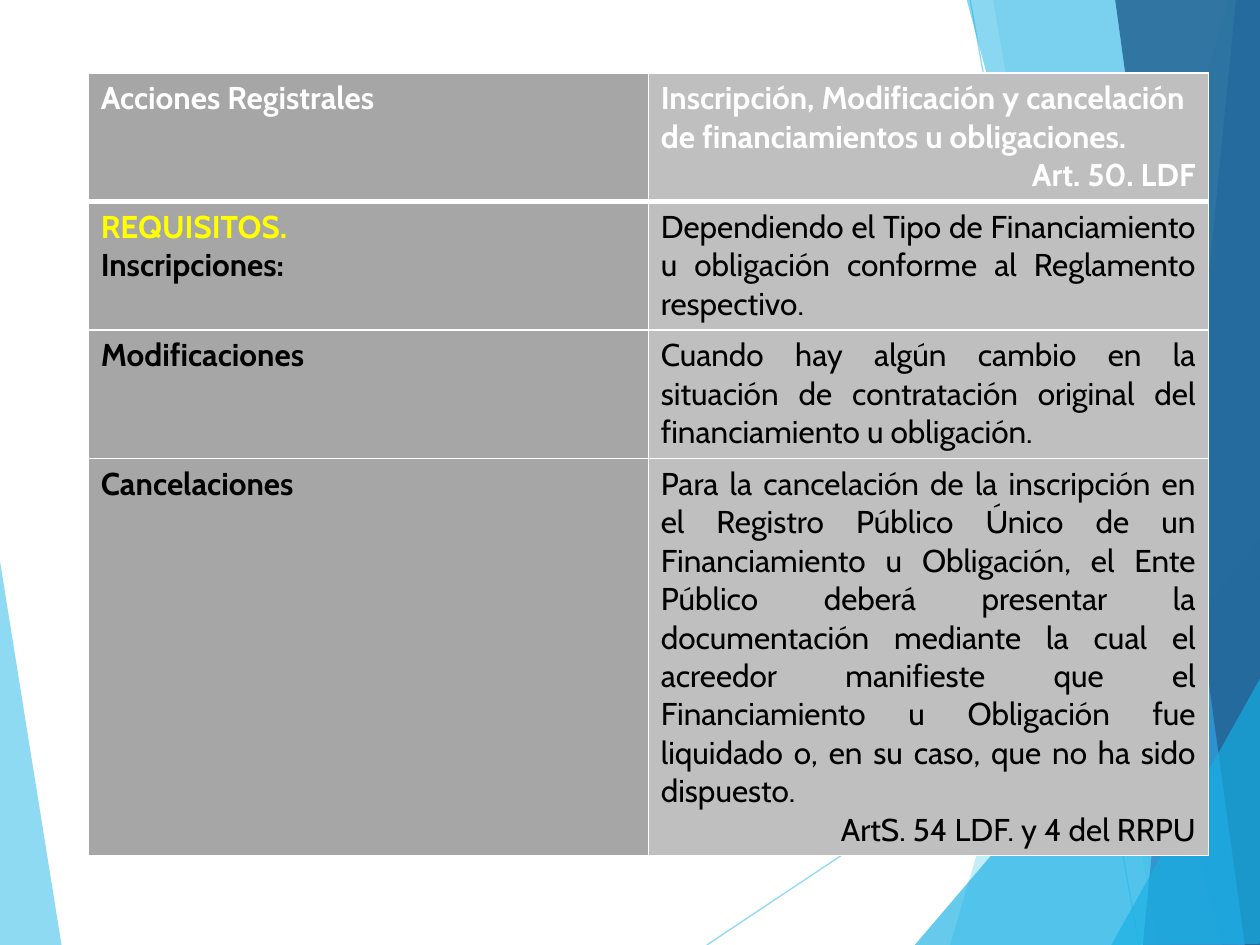
"""Build the slide on registry actions for financing and obligations."""
from dataclasses import dataclass

from lxml import etree
from pptx import Presentation
from pptx import util as u
from pptx.dml.color import RGBColor
from pptx.enum import shapes, text
from pptx.oxml.ns import qn

COLORS = {
    "sky": "5FCBEF", "cyan": "17B0E4", "blue": "2E83C3", "navy": "226292",
    "gray": "A6A6A6", "silver": "BFBFBF", "white": "FFFFFF",
    "yellow": "FFFF00", "black": "000000",
}
LEFT, RIGHT, JUSTIFY = text.PP_ALIGN.LEFT, text.PP_ALIGN.RIGHT, text.PP_ALIGN.JUSTIFY


@dataclass
class Facet:
    points: list[tuple[float, float]]
    color: str
    opacity: int


@dataclass
class Ray:
    start: tuple[float, float]
    end: tuple[float, float]


@dataclass
class Line:
    words: str
    color: str = "black"
    bold: bool = False
    align: text.PP_ALIGN = LEFT


@dataclass
class Row:
    height: float
    action: list[Line]
    detail: list[Line]


RAYS = [Ray((5.61, 7.5), (10.01, 4.57)), Ray((7.7, 0), (9.04, 7.5))]
LEFT_FACET = Facet([(-0.01, 4.39), (0.49, 7.51), (-0.01, 7.5)], "sky", 70)
RIGHT_FACETS = [
    Facet([(9.75, 0), (7.54, 7.5), (10.02, 7.51), (10.01, 0.01)], "sky", 36),
    Facet([(7.88, -0.01), (9.19, 7.5), (10.01, 7.5), (10.01, -0.01)], "sky", 20),
    Facet([(7.26, 7.5), (10, 4.29), (10.01, 7.5)], "cyan", 66),
    Facet([(7.67, -0.01), (9.7, 7.5), (10.01, 7.49), (10.01, -0.01)], "cyan", 50),
    Facet([(9.81, -0.01), (9.07, 7.5), (10.01, 7.5), (10, -0.01)], "blue", 70),
    Facet([(8.85, -0.01), (9.88, 7.5), (10.02, 7.5), (10, -0.01)], "navy", 82),
    Facet([(8.82, 7.5), (10.02, 5.35), (10.02, 7.49)], "cyan", 66),
]
ROWS = [
    Row(1.02, [Line("Acciones Registrales", "white", True)], [
        Line("Inscripción, Modificación y cancelación de financiamientos u "
             "obligaciones.", "white", True),
        Line("Art. 50. LDF", "white", True, RIGHT),
    ]),
    Row(1.02, [Line("REQUISITOS.", "yellow", True), Line("Inscripciones:", bold=True)], [
        Line("Dependiendo el Tipo de Financiamiento u obligación conforme al "
             "Reglamento respectivo.", align=JUSTIFY),
    ]),
    Row(1.02, [Line("Modificaciones", bold=True)], [
        Line("Cuando hay algún cambio en la situación de contratación original del "
             "financiamiento u obligación.", align=JUSTIFY),
    ]),
    Row(3.14, [Line("Cancelaciones", bold=True)], [
        Line("Para la cancelación de la inscripción en el Registro Público Único de un "
             "Financiamiento u Obligación, el Ente Público deberá presentar la "
             "documentación mediante la cual el acreedor manifieste que el "
             "Financiamiento u Obligación fue liquidado o, en su caso, que no ha sido "
             "dispuesto.", align=JUSTIFY),
        Line("ArtS. 54 LDF. y 4 del RRPU", align=RIGHT),
    ]),
]


def rgb(name: str) -> RGBColor:
    """Return the named colour."""
    return RGBColor.from_string(COLORS[name])


def set_opacity(shape, percent: int) -> None:
    """Make the only solid colour of a shape translucent."""
    color = next(shape._element.spPr.iter(qn("a:srgbClr")))
    etree.SubElement(color, qn("a:alpha"), val=str(percent * 1000))


def draw_facet(slide, facet: Facet) -> None:
    """Draw one translucent polygon."""
    corners = [(u.Inches(x), u.Inches(y)) for x, y in facet.points]
    builder = slide.shapes.build_freeform(*corners[0])
    builder.add_line_segments(corners[1:], close=True)
    polygon = builder.convert_to_shape()
    polygon.shadow.inherit = False
    polygon.fill.solid()
    polygon.fill.fore_color.rgb = rgb(facet.color)
    polygon.line.fill.background()
    set_opacity(polygon, facet.opacity)


def draw_ray(slide, ray: Ray) -> None:
    """Draw one thin translucent line."""
    ends = [u.Inches(value) for value in ray.start + ray.end]
    connector = slide.shapes.add_connector(shapes.MSO_CONNECTOR.STRAIGHT, *ends)
    connector.line.color.rgb = rgb("sky")
    connector.line.width = u.Pt(0.75)
    set_opacity(connector, 70)
    etree.SubElement(connector._element.spPr, qn("a:effectLst"))


def set_borders(cell, top: float, bottom: float) -> None:
    """Give a cell white borders, with its own top and bottom widths."""
    properties = cell._tc.get_or_add_tcPr()
    widths = {"lnL": 1, "lnR": 1, "lnT": top, "lnB": bottom}
    for position, (side, width) in enumerate(widths.items()):
        border = etree.Element(qn(f"a:{side}"), w=str(u.Pt(width)))
        fill = etree.SubElement(border, qn("a:solidFill"))
        etree.SubElement(fill, qn("a:srgbClr"), val=COLORS["white"])
        properties.insert(position, border)


def fill_cell(cell, lines: list[Line], background: str) -> None:
    """Write the lines of a cell and colour its background."""
    cell.fill.solid()
    cell.fill.fore_color.rgb = rgb(background)
    cell.text_frame.text = "\n".join(line.words for line in lines)
    for paragraph, line in zip(cell.text_frame.paragraphs, lines):
        paragraph.alignment = line.align
        font = paragraph.runs[0].font
        font.name, font.size, font.bold = "Cabin", u.Pt(18), line.bold
        font.color.rgb = rgb(line.color)


def draw_table(slide, rows: list[Row]) -> None:
    """Draw the table of actions and their requirements."""
    height = sum(row.height for row in rows)
    actions = slide.shapes.add_table(
        len(rows), 2, u.Inches(0.7), u.Inches(0.58), u.Inches(8.89), u.Inches(height)
    ).table
    for index, row in enumerate(rows):
        actions.rows[index].height = u.Inches(row.height)
        contents = ((row.action, "gray"), (row.detail, "silver"))
        for column, (lines, background) in enumerate(contents):
            cell = actions.cell(index, column)
            fill_cell(cell, lines, background)
            set_borders(cell, 3 if index == 1 else 1, 3 if index == 0 else 1)


def main() -> None:
    """Build and save the presentation."""
    deck = Presentation()
    deck.slide_width, deck.slide_height = u.Inches(10), u.Inches(7.5)
    slide = deck.slides.add_slide(deck.slide_layouts[6])
    draw_facet(slide, LEFT_FACET)
    for ray in RAYS:
        draw_ray(slide, ray)
    for facet in RIGHT_FACETS:
        draw_facet(slide, facet)
    draw_table(slide, ROWS)
    deck.save("out.pptx")


if __name__ == "__main__":
    main()
